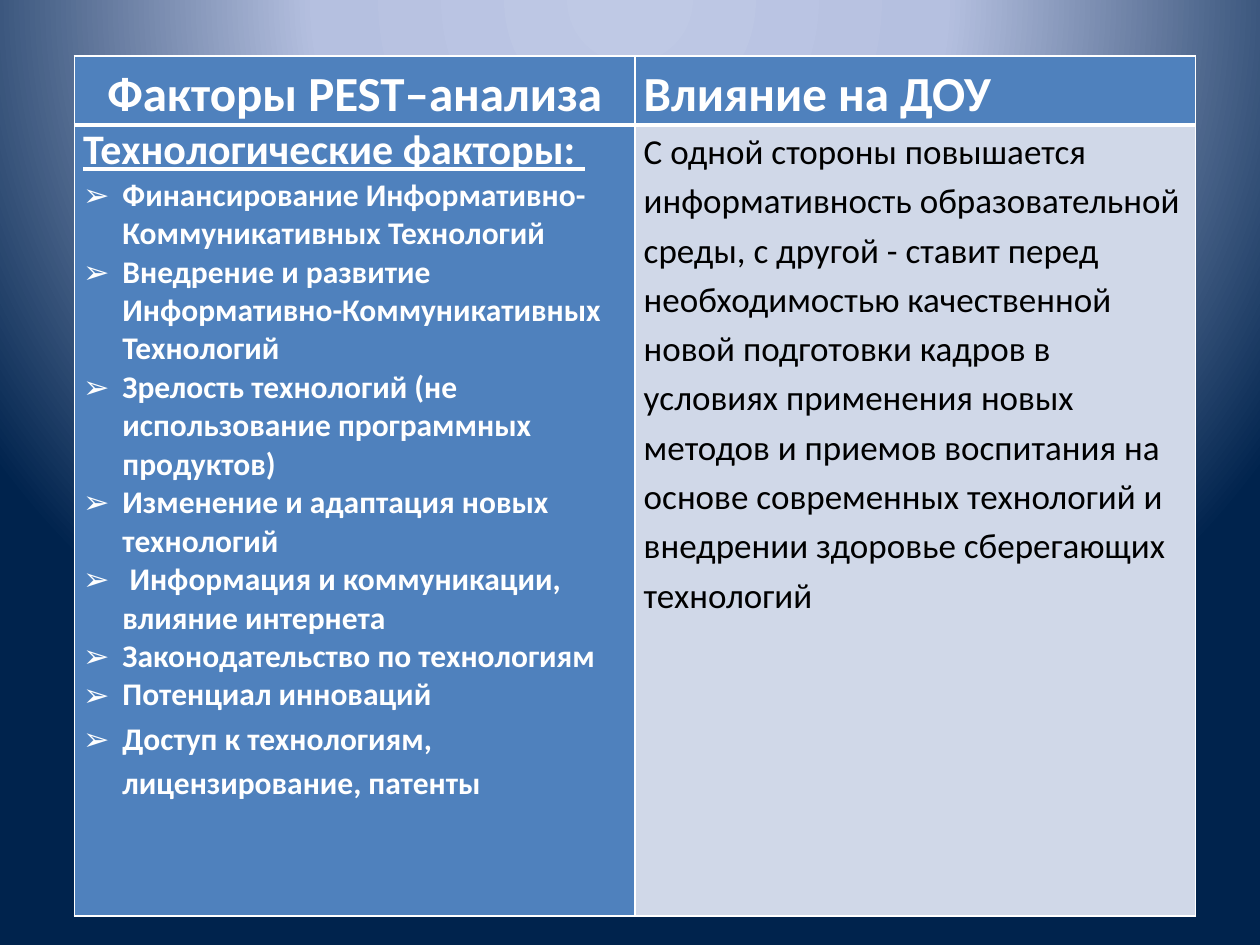
from lxml.etree import SubElement
from pptx import Presentation
from pptx.dml.color import RGBColor
from pptx.enum.text import PP_ALIGN
from pptx.oxml import parse_xml
from pptx.oxml.ns import nsdecls, qn
from pptx.util import Pt

WHITE = RGBColor(0xFF, 0xFF, 0xFF)
BLACK = RGBColor(0x00, 0x00, 0x00)
BLUE = RGBColor(0x4F, 0x81, 0xBD)
PALE = RGBColor(0xD0, 0xD8, 0xE8)
GLOW = [(0, RGBColor(0xBF, 0xC9, 0xE5)),
        (40, RGBColor(0xB5, 0xC0, 0xE0)),
        (100, RGBColor(0x00, 0x23, 0x4D))]

FACTORS = [
    "Финансирование Информативно-Коммуникативных Технологий",
    "Внедрение и развитие Информативно-Коммуникативных Технологий",
    "Зрелость технологий (не использование программных продуктов)",
    "Изменение и адаптация новых технологий",
    " Информация и коммуникации, влияние интернета",
    "Законодательство по технологиям",
    "Потенциал инноваций",
    "Доступ к технологиям, лицензирование, патенты",
]
IMPACT = (
    "С одной стороны повышается информативность образовательной среды, "
    "с другой - ставит перед необходимостью качественной новой подготовки "
    "кадров в условиях применения новых методов и приемов воспитания на "
    "основе современных технологий и внедрении здоровье сберегающих технологий"
)


class SlideBuilder:
    font = "Calibri"
    spacing = 1.15
    indent = Pt(22.5)
    margin = Pt(5)

    def __init__(self, slide):
        self.slide = slide

    def radial_background(self, stops):
        """Fill the background with a circular gradient centred above the slide."""
        self.slide.background.fill.solid()
        solid = self.slide.background._cSld.bg.bgPr.find(qn("a:solidFill"))
        gs = "".join(f'<a:gs pos="{pos * 1000}"><a:srgbClr val="{color}"/></a:gs>'
                     for pos, color in stops)
        solid.getparent().replace(solid, parse_xml(
            f'<a:gradFill rotWithShape="1" {nsdecls("a")}><a:gsLst>{gs}</a:gsLst>'
            '<a:path path="circle"><a:fillToRect l="50000" t="-80000" '
            'r="50000" b="180000"/></a:path></a:gradFill>'))

    def table(self, left, top, widths, heights):
        frame = self.slide.shapes.add_table(len(heights), len(widths), left, top,
                                            sum(widths), sum(heights))
        table = frame.table
        table.horz_banding = False
        for column, width in zip(table.columns, widths):
            column.width = width
        for row, height in zip(table.rows, heights):
            row.height = height
        return table

    def cell(self, cell, fill, top=1, bottom=1):
        """Set margins, white borders and fill; top and bottom are line widths."""
        cell.margin_left = cell.margin_right = self.margin
        cell.margin_top = cell.margin_bottom = 0
        tcPr = cell._tc.get_or_add_tcPr()
        for side, width in zip("LRTB", (1, 1, top, bottom)):
            tcPr.append(parse_xml(
                f'<a:ln{side} w="{Pt(width)}" {nsdecls("a")}><a:solidFill>'
                f'<a:srgbClr val="{WHITE}"/></a:solidFill></a:ln{side}>'))
        cell.fill.solid()
        cell.fill.fore_color.rgb = fill
        return cell.text_frame

    def paragraph(self, p, text, size, color=WHITE, bold=True, underline=False,
                  align=PP_ALIGN.LEFT, spacing=None):
        p.text = text
        p.alignment = align
        if spacing:
            p.line_spacing = spacing
        font = p.runs[0].font
        font.name, font.size, font.bold = self.font, Pt(size), bold
        font.underline = underline
        font.color.rgb = color

    def bullet(self, p, text, size, spacing=None):
        self.paragraph(p, text, size, spacing=spacing)
        pPr = p._p.get_or_add_pPr()
        pPr.set("marL", str(self.indent))
        pPr.set("indent", str(-self.indent))
        SubElement(pPr, qn("a:buFont"), typeface="Arial")
        SubElement(pPr, qn("a:buChar"), char="➢")


def main():
    prs = Presentation()
    prs.slide_width, prs.slide_height = Pt(720), Pt(540)
    s = SlideBuilder(prs.slides.add_slide(prs.slide_layouts[6]))
    s.radial_background(GLOW)

    table = s.table(Pt(42.5), Pt(32), [Pt(320.4)] * 2, [Pt(39), Pt(452)])
    headings = [("Факторы PEST–анализа", PP_ALIGN.CENTER),
                ("Влияние на ДОУ", PP_ALIGN.LEFT)]
    for column, (text, align) in enumerate(headings):
        tf = s.cell(table.cell(0, column), BLUE, bottom=3)
        s.paragraph(tf.paragraphs[0], text, 28, align=align, spacing=s.spacing)

    tf = s.cell(table.cell(1, 0), BLUE, top=3)
    s.paragraph(tf.paragraphs[0], "Технологические факторы: ", 24,
                underline=True, align=PP_ALIGN.JUSTIFY)
    for text in FACTORS:
        last = text == FACTORS[-1]
        s.bullet(tf.add_paragraph(), text, 18, s.spacing if last else None)

    tf = s.cell(table.cell(1, 1), PALE, top=3)
    s.paragraph(tf.paragraphs[0], IMPACT, 20, BLACK, bold=False, spacing=s.spacing)

    prs.save("out.pptx")


if __name__ == "__main__":
    main()
